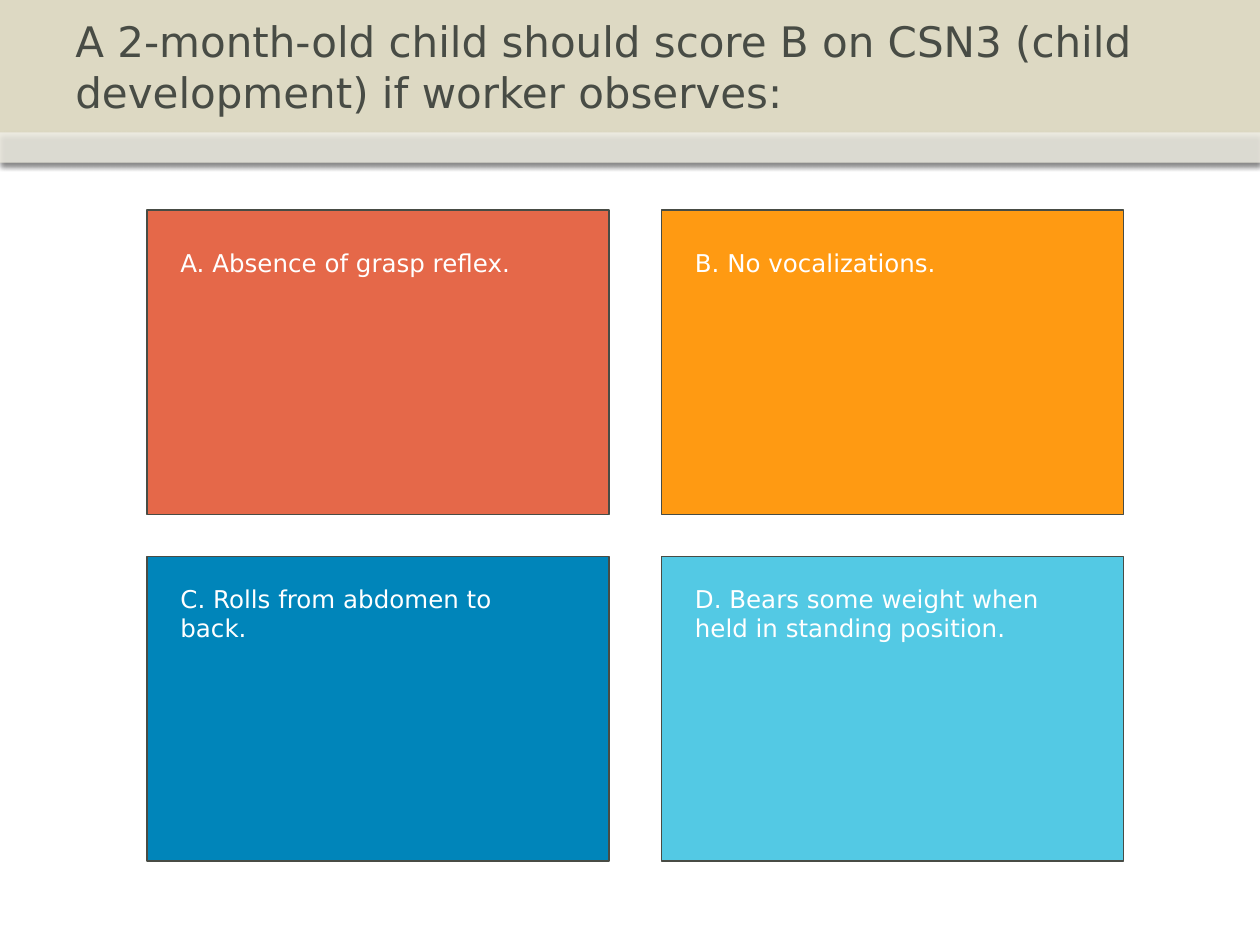
import pptx
import pptx.util
import pptx.dml.color
import pptx.enum.shapes
import pptx.enum.text
import pptx.oxml
import pptx.oxml.ns

Pt = pptx.util.Pt

COLORS = {
    "band": "DDD9C3", "strip": "FFFFFF", "dark": "484C45", "light": "FFFFFF",
    "coral": "E56849", "orange": "FF9A12", "blue": "0085BA", "sky": "53C9E4",
}
FONT = "DejaVu Sans"
TITLE = "A 2-month-old child should score B on CSN3 (child development) if worker observes:"
# Answer text, card colour, text box width and height; two cards to a row
ANSWERS = [
    ("A. Absence of grasp reflex.", "coral", 216, 24.5),
    ("B. No vocalizations.", "orange", 228, 24.5),
    ("C. Rolls from abdomen to back.", "blue", 234, 41),
    ("D. Bears some weight when held in standing position.", "sky", 240, 41),
]

PAGE_WIDTH, PAGE_HEIGHT = 720, 540
BAND_HEIGHT, TITLE_HEIGHT = 93, 75.6
GRID_LEFT, GRID_TOP = 84, 120
CARD_WIDTH, CARD_HEIGHT = 264, 174
COLUMN_STEP, ROW_STEP = 294, 198
TEXT_INDENT = 12
TEXT_DROPS = [18, 12]  # from card top to text box, by row


def rgb(name):
    return pptx.dml.color.RGBColor.from_string(COLORS[name])


def add_rectangle(page, left, top, width, height, color, outline=None):
    shape = page.shapes.add_shape(
        pptx.enum.shapes.MSO_SHAPE.RECTANGLE, Pt(left), Pt(top), Pt(width), Pt(height))
    shape.shadow.inherit = False
    shape.fill.solid()
    shape.fill.fore_color.rgb = rgb(color)
    if outline:
        shape.line.color.rgb = rgb(outline)
        shape.line.width = Pt(0.75)
    else:
        shape.line.fill.background()
    return shape


def add_drop_shadow(shape):
    effects = shape._element.spPr.find(pptx.oxml.ns.qn("a:effectLst"))
    effects.append(pptx.oxml.parse_xml(
        f'<a:outerShdw {pptx.oxml.ns.nsdecls("a")} blurRad="{Pt(3.1)}" dist="{Pt(1.8)}" '
        'dir="5400000" rotWithShape="0"><a:srgbClr val="000000">'
        '<a:alpha val="35000"/></a:srgbClr></a:outerShdw>'))


def set_opacity(shape, percent):
    color = shape._element.spPr.find(".//" + pptx.oxml.ns.qn("a:srgbClr"))
    color.append(pptx.oxml.parse_xml(
        f'<a:alpha {pptx.oxml.ns.nsdecls("a")} val="{percent * 1000}"/>'))


def add_text(page, left, top, width, height, text, size, color):
    box = page.shapes.add_textbox(Pt(left), Pt(top), Pt(width), Pt(height))
    frame = box.text_frame
    frame.word_wrap = True
    para = frame.paragraphs[0]
    para.text = text
    para.font.name = FONT
    para.font.size = Pt(size)
    para.font.color.rgb = rgb(color)
    return frame


def add_header(page):
    band = add_rectangle(page, 0, 0, PAGE_WIDTH, BAND_HEIGHT, "band")
    strip = add_rectangle(
        page, 0, TITLE_HEIGHT, PAGE_WIDTH, BAND_HEIGHT - TITLE_HEIGHT, "strip")
    set_opacity(strip, 53)
    for shape in (band, strip):
        add_drop_shadow(shape)
    title = add_text(page, 36, 0, PAGE_WIDTH - 72, TITLE_HEIGHT, TITLE, 24, "dark")
    title.vertical_anchor = pptx.enum.text.MSO_ANCHOR.MIDDLE


def add_answers(page):
    for index, (text, color, width, height) in enumerate(ANSWERS):
        row, column = divmod(index, 2)
        left = GRID_LEFT + column * COLUMN_STEP
        top = GRID_TOP + row * ROW_STEP
        add_rectangle(page, left, top, CARD_WIDTH, CARD_HEIGHT, color, "dark")
        frame = add_text(page, left + TEXT_INDENT, top + TEXT_DROPS[row],
                         width, height, text, 14, "light")
        frame.auto_size = pptx.enum.text.MSO_AUTO_SIZE.SHAPE_TO_FIT_TEXT


def main():
    deck = pptx.Presentation()
    deck.slide_width, deck.slide_height = Pt(PAGE_WIDTH), Pt(PAGE_HEIGHT)
    page = deck.slides.add_slide(deck.slide_layouts[6])
    add_header(page)
    add_answers(page)
    deck.save("out.pptx")


if __name__ == "__main__":
    main()
